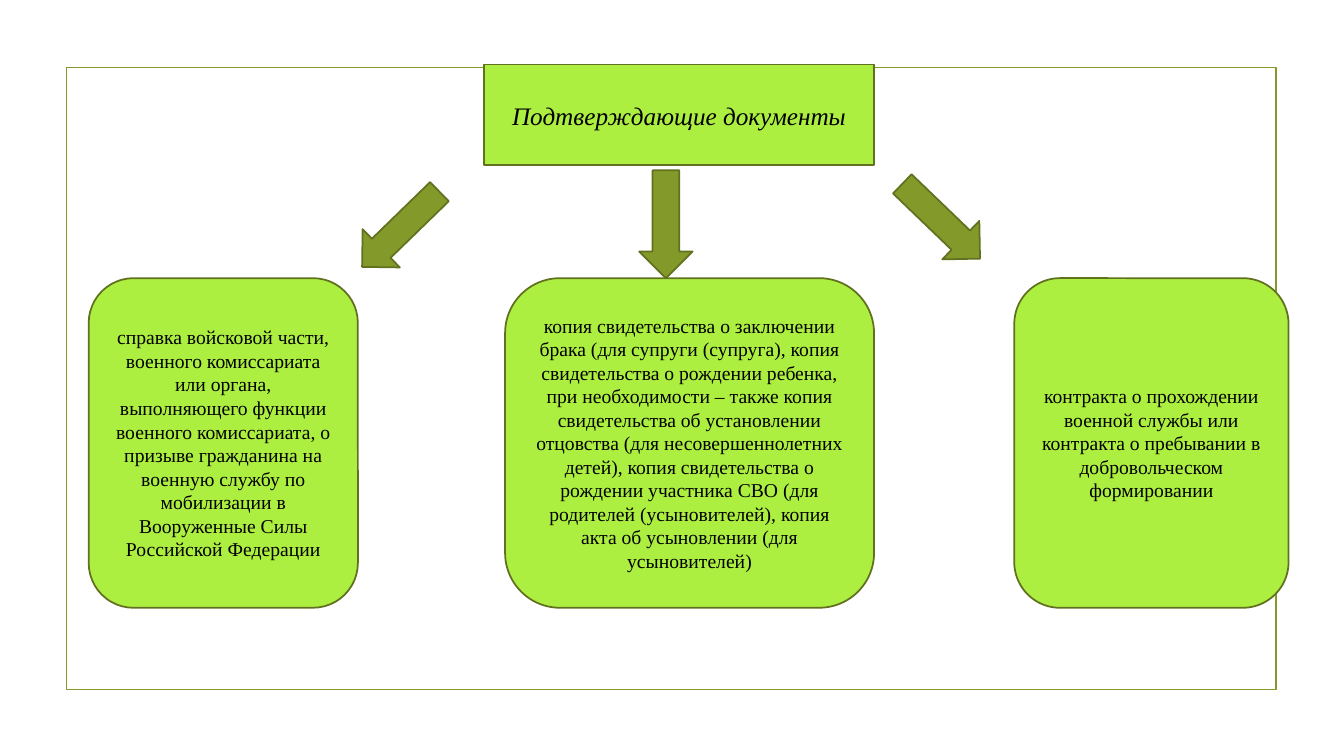
from pptx import Presentation
from pptx.dml.color import RGBColor
from pptx.enum.shapes import MSO_SHAPE
from pptx.enum.text import MSO_ANCHOR, MSO_AUTO_SIZE, PP_ALIGN
from pptx.util import Inches, Pt

RECTANGLE = MSO_SHAPE.RECTANGLE
ROUNDED = MSO_SHAPE.ROUNDED_RECTANGLE
DOWN_ARROW = MSO_SHAPE.DOWN_ARROW
MIDDLE = MSO_ANCHOR.MIDDLE
NO_AUTOFIT = MSO_AUTO_SIZE.NONE
CENTER = PP_ALIGN.CENTER

FONT = "Times New Roman"
LIME, OLIVE, DARK_OLIVE, BLACK = "ADEF41", "83992A", "61711F", "000000"

HEADING = "Подтверждающие документы"
DOCUMENTS = [
    (0.88, 2.67,
     "справка войсковой части, военного комиссариата или органа, "
     "выполняющего функции военного комиссариата, о призыве гражданина "
     "на военную службу по мобилизации в Вооруженные Силы "
     "Российской Федерации"),
    (5.01, 3.66,
     "копия свидетельства о заключении брака (для супруги (супруга), "
     "копия свидетельства о рождении ребенка, при необходимости – также "
     "копия свидетельства об установлении отцовства "
     "(для несовершеннолетних детей), копия свидетельства о рождении "
     "участника СВО (для родителей (усыновителей), копия акта "
     "об усыновлении (для усыновителей)"),
    (10.06, 2.72,
     "контракта о прохождении военной службы или контракта о пребывании "
     "в добровольческом формировании"),
]
CARD_TOP, CARD_HEIGHT = 2.76, 3.27
ARROWS = [(3.71, 1.74, 45.8), (6.34, 1.69, 0), (9.07, 1.66, 313.9)]
ARROW_WIDTH, ARROW_HEIGHT = 0.53, 1.07


def color(value):
    return RGBColor.from_string(value)


def paint(shape, fill, line):
    if fill:
        shape.fill.solid()
        shape.fill.fore_color.rgb = color(fill)
    else:
        shape.fill.background()
    shape.line.color.rgb = color(line)
    shape.line.width = Pt(1.25)


def add_shape(page, kind, left, top, width, height, fill, line):
    shape = page.shapes.add_shape(
        kind, Inches(left), Inches(top), Inches(width), Inches(height))
    shape.shadow.inherit = False
    paint(shape, fill, line)
    return shape


def write(shape, text, size, italic=False):
    frame = shape.text_frame
    frame.word_wrap = True
    frame.auto_size = NO_AUTOFIT
    frame.vertical_anchor = MIDDLE
    para = frame.paragraphs[0]
    para.alignment = CENTER
    span = para.add_run()
    span.text = text
    span.font.name = FONT
    span.font.size = Pt(size)
    span.font.italic = italic
    span.font.color.rgb = color(BLACK)


def main():
    deck = Presentation()
    deck.slide_width, deck.slide_height = Inches(13.33), Inches(7.5)
    page = deck.slides.add_slide(deck.slide_layouts[5])

    heading = page.shapes.title
    heading.left, heading.top = Inches(4.8), Inches(0.64)
    heading.width, heading.height = Inches(3.87), Inches(1)
    paint(heading, LIME, DARK_OLIVE)
    write(heading, HEADING, 18, italic=True)

    border = add_shape(page, RECTANGLE, 0.66, 0.67, 12, 6.17, None, OLIVE)
    heading.element.addprevious(border.element)

    for left, width, text in DOCUMENTS:
        card = add_shape(page, ROUNDED, left, CARD_TOP, width, CARD_HEIGHT,
                         LIME, DARK_OLIVE)
        write(card, text, 14)

    for left, top, angle in ARROWS:
        arrow = add_shape(page, DOWN_ARROW, left, top, ARROW_WIDTH,
                          ARROW_HEIGHT, OLIVE, DARK_OLIVE)
        arrow.rotation = angle

    deck.save("out.pptx")


if __name__ == "__main__":
    main()
